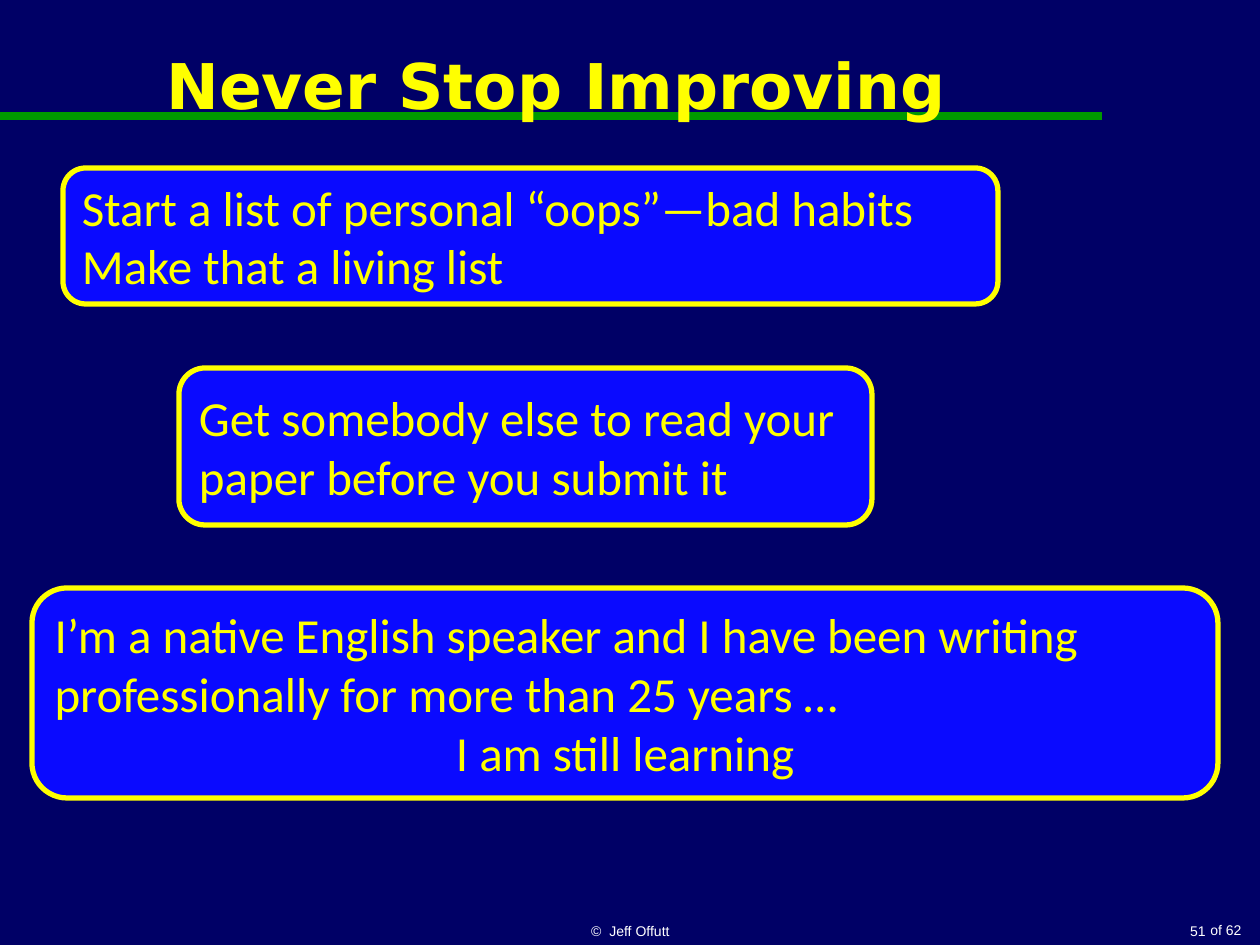
import pptx
import pptx.dml.color
import pptx.enum.shapes
import pptx.enum.text
import pptx.oxml.ns
import pptx.util
from lxml import etree

PX = 914400 / 126
ALIGN = pptx.enum.text.PP_ALIGN
ANCHOR = pptx.enum.text.MSO_ANCHOR
YELLOW = "FFFF00"


def paint(color_format, hex_color):
    color_format.rgb = pptx.dml.color.RGBColor.from_string(hex_color)


def write(shape, *lines, font="Calibri", size=28, color=YELLOW, bold=False,
          anchor=ANCHOR.MIDDLE, wrap=True):
    """Fill a shape with paragraphs, each given as (text, alignment)."""
    frame = shape.text_frame
    frame.word_wrap = wrap
    frame.vertical_anchor = anchor
    for index, (text, alignment) in enumerate(lines):
        paragraph = frame.add_paragraph() if index else frame.paragraphs[0]
        paragraph.alignment = alignment
        run = paragraph.add_run()
        run.text = text
        run.font.name = font
        run.font.size = pptx.util.Pt(size)
        run.font.bold = bold
        paint(run.font.color, color)


deck = pptx.Presentation()
deck.slide_width, deck.slide_height = pptx.util.Inches(10), pptx.util.Inches(7.5)
slide = deck.slides.add_slide(deck.slide_layouts[6])
slide.background.fill.solid()
paint(slide.background.fill.fore_color, "000066")

# Rule under the title
rule = slide.shapes.add_connector(
    pptx.enum.shapes.MSO_CONNECTOR.STRAIGHT,
    *[round(n * PX) for n in (0, 116, 1102, 116)])
rule.line.width = pptx.util.Pt(4.5)
paint(rule.line.color, "009900")
etree.SubElement(rule._element.spPr, pptx.oxml.ns.qn("a:effectLst"))

title = slide.shapes.add_textbox(*[round(n * PX) for n in (10, 0, 1092, 168)])
write(title, ("Never Stop Improving", ALIGN.CENTER),
      font="DejaVu Sans", size=36, bold=True)

# Footer: copyright, page number, page count
footer = [
    ((431, 903, 399, 42), "©  Jeff Offutt", ALIGN.CENTER, ANCHOR.BOTTOM, True),
    ((998, 903, 220, 42), "51", ALIGN.RIGHT, ANCHOR.BOTTOM, True),
    ((1197, 915, 57, 30), "of 62", ALIGN.RIGHT, ANCHOR.TOP, False),
]
for place, text, alignment, anchor, wrap in footer:
    note = slide.shapes.add_textbox(*[round(n * PX) for n in place])
    write(note, (text, alignment), font="Arial", size=8, color="FFFFFF",
          anchor=anchor, wrap=wrap)

# Pieces of advice
advice = [
    ((63, 168, 935, 136),
     [("Start a list of personal “oops”—bad habits", ALIGN.LEFT),
      ("Make that a living list", ALIGN.LEFT)]),
    ((179, 368, 693, 157),
     [("Get somebody else to read your paper before you submit it", ALIGN.LEFT)]),
    ((32, 588, 1186, 210),
     [("I’m a native English speaker and I have been writing professionally "
       "for more than 25 years …", ALIGN.LEFT),
      ("I am still learning", ALIGN.CENTER)]),
]
for place, lines in advice:
    tip = slide.shapes.add_shape(
        pptx.enum.shapes.MSO_SHAPE.ROUNDED_RECTANGLE,
        *[round(n * PX) for n in place])
    tip.shadow.inherit = False
    tip.fill.solid()
    paint(tip.fill.fore_color, "0A0AFF")
    paint(tip.line.color, YELLOW)
    tip.line.width = pptx.util.Pt(3)
    write(tip, *lines)

deck.save("out.pptx")
